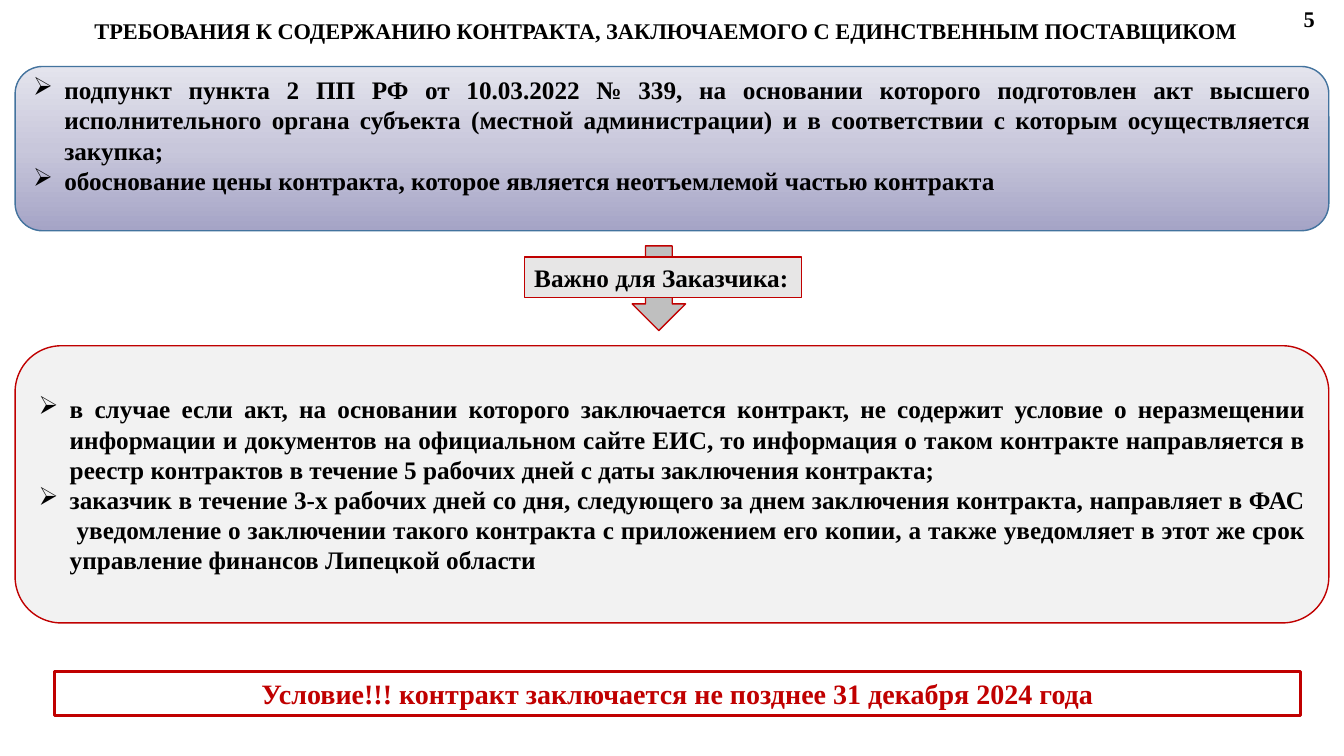
from copy import deepcopy
from dataclasses import dataclass, field
from typing import Any

from lxml import etree
from pptx import Presentation
from pptx import util as u
from pptx.dml import color
from pptx.enum import shapes, text
from pptx.oxml import ns

FONT = "Times New Roman"
BLACK, RED = "000000", "C00000"
KIND = shapes.MSO_SHAPE
ALIGN = text.PP_ALIGN
TOP, MIDDLE = text.MSO_ANCHOR.TOP, text.MSO_ANCHOR.MIDDLE
GROW = text.MSO_AUTO_SIZE.SHAPE_TO_FIT_TEXT
INDENT = 0.31


@dataclass
class Wording:
    paragraphs: list[str]
    size: float = 18
    ink: str = BLACK
    align: Any = ALIGN.LEFT
    bulleted: bool = False
    frame: dict[str, Any] = field(default_factory=dict)


@dataclass
class Block:
    kind: Any
    place: tuple[float, float, float, float]
    fills: list[str]
    outline: str
    weight: float = 1
    wording: Wording | None = None


def rgb(value: str) -> color.RGBColor:
    return color.RGBColor.from_string(value)


def apply(target: Any, values: dict[str, Any]) -> None:
    for name, value in values.items():
        setattr(target, name, value)


def move(part: Any, place: tuple[float, float, float, float]) -> None:
    apply(part, dict(zip(("left", "top", "width", "height"), map(u.Inches, place))))


def add_bullet(paragraph: Any) -> None:
    properties = paragraph._p.get_or_add_pPr()
    properties.set("marL", str(u.Inches(INDENT)))
    properties.set("indent", str(-u.Inches(INDENT)))
    etree.SubElement(properties, ns.qn("a:buChar")).set("char", "➢")


def write(part: Any, wording: Wording) -> None:
    frame = part.text_frame
    apply(frame, {"word_wrap": True, "vertical_anchor": TOP} | wording.frame)
    for number, line in enumerate(wording.paragraphs):
        paragraph = frame.add_paragraph() if number else frame.paragraphs[0]
        paragraph.alignment = wording.align
        if wording.bulleted:
            add_bullet(paragraph)
        run = paragraph.add_run()
        run.text = line
        apply(run.font, {"name": FONT, "size": u.Pt(wording.size), "bold": True})
        run.font.color.rgb = rgb(wording.ink)


def paint(part: Any, fills: list[str]) -> None:
    if not fills:
        part.fill.background()
    elif len(fills) == 1:
        part.fill.solid()
        part.fill.fore_color.rgb = rgb(fills[0])
    else:
        part.fill.gradient()
        part.fill.gradient_angle = 90
        stop_list = part._element.spPr.find(".//" + ns.qn("a:gsLst"))
        for _ in fills[2:]:
            stop_list.insert(1, deepcopy(stop_list[0]))
        for number, stop in enumerate(part.fill.gradient_stops):
            stop.position = number / (len(fills) - 1)
            stop.color.rgb = rgb(fills[number])


def draw(slide: Any, block: Block) -> None:
    part = slide.shapes.add_shape(block.kind, *map(u.Inches, block.place))
    part.shadow.inherit = False
    paint(part, block.fills)
    part.line.color.rgb = rgb(block.outline)
    part.line.width = u.Pt(block.weight)
    if block.wording:
        write(part, block.wording)


HEADING = Wording(
    ["ТРЕБОВАНИЯ К СОДЕРЖАНИЮ КОНТРАКТА, ЗАКЛЮЧАЕМОГО С ЕДИНСТВЕННЫМ ПОСТАВЩИКОМ"],
    size=16, align=ALIGN.CENTER, frame={"vertical_anchor": MIDDLE})

CONTRACT_CONTENT = Wording(
    ["подпункт пункта 2 ПП РФ от 10.03.2022 № 339, на основании которого подготовлен "
     "акт высшего исполнительного органа субъекта (местной администрации) и в "
     "соответствии с которым осуществляется закупка;",
     "обоснование цены контракта, которое является неотъемлемой частью контракта"],
    align=ALIGN.JUSTIFY, bulleted=True, frame={"margin_top": 0})

CUSTOMER_DUTIES = Wording(
    ["в случае если акт, на основании которого заключается контракт, не содержит "
     "условие о неразмещении информации и документов на официальном сайте ЕИС, то "
     "информация о таком контракте направляется в реестр контрактов в течение 5 "
     "рабочих дней с даты заключения контракта;",
     "заказчик в течение 3-х рабочих дней со дня, следующего за днем заключения "
     "контракта, направляет в ФАС  уведомление о заключении такого контракта с "
     "приложением его копии, а также уведомляет в этот же срок управление финансов "
     "Липецкой области"],
    align=ALIGN.JUSTIFY, bulleted=True, frame={"vertical_anchor": MIDDLE})

DEADLINE = Wording(
    ["Условие!!! контракт заключается не позднее 31 декабря 2024 года"],
    size=20, ink=RED, align=ALIGN.CENTER, frame={"auto_size": GROW})

IMPORTANT = Wording(["Важно для Заказчика:"],
                    frame={"word_wrap": False, "auto_size": GROW})

BLOCKS = [
    Block(KIND.ROUNDED_RECTANGLE, (0.15, 0.66, 13.03, 1.63),
          ["A5A4C6", "C8C7DB", "E4E4ED"], "43739E", wording=CONTRACT_CONTENT),
    Block(KIND.ROUNDED_RECTANGLE, (0.15, 3.43, 13.03, 2.75), ["F2F2F2"], RED,
          wording=CUSTOMER_DUTIES),
    Block(KIND.RECTANGLE, (0.54, 6.66, 12.36, 0.44), [], RED, 2.25, DEADLINE),
    Block(KIND.DOWN_ARROW, (6.27, 2.44, 0.53, 0.84), ["BFBFBF"], RED),
    Block(KIND.RECTANGLE, (5.2, 2.55, 2.75, 0.4), ["E7E6E6"], RED,
          wording=IMPORTANT),
]


def main() -> None:
    deck = Presentation()
    apply(deck, {"slide_width": u.Inches(13.33), "slide_height": u.Inches(7.5)})
    slide = deck.slides.add_slide(deck.slide_layouts[5])
    heading = slide.shapes.title
    move(heading, (0.37, -0.05, 12.47, 0.71))
    write(heading, HEADING)
    for block in BLOCKS:
        draw(slide, block)
    page_number = slide.shapes.add_textbox(
        *map(u.Inches, (12.83, 0, 0.41, 0.37)))
    write(page_number, Wording(["5"], size=16, frame={"auto_size": GROW}))
    deck.save("out.pptx")


if __name__ == "__main__":
    main()
